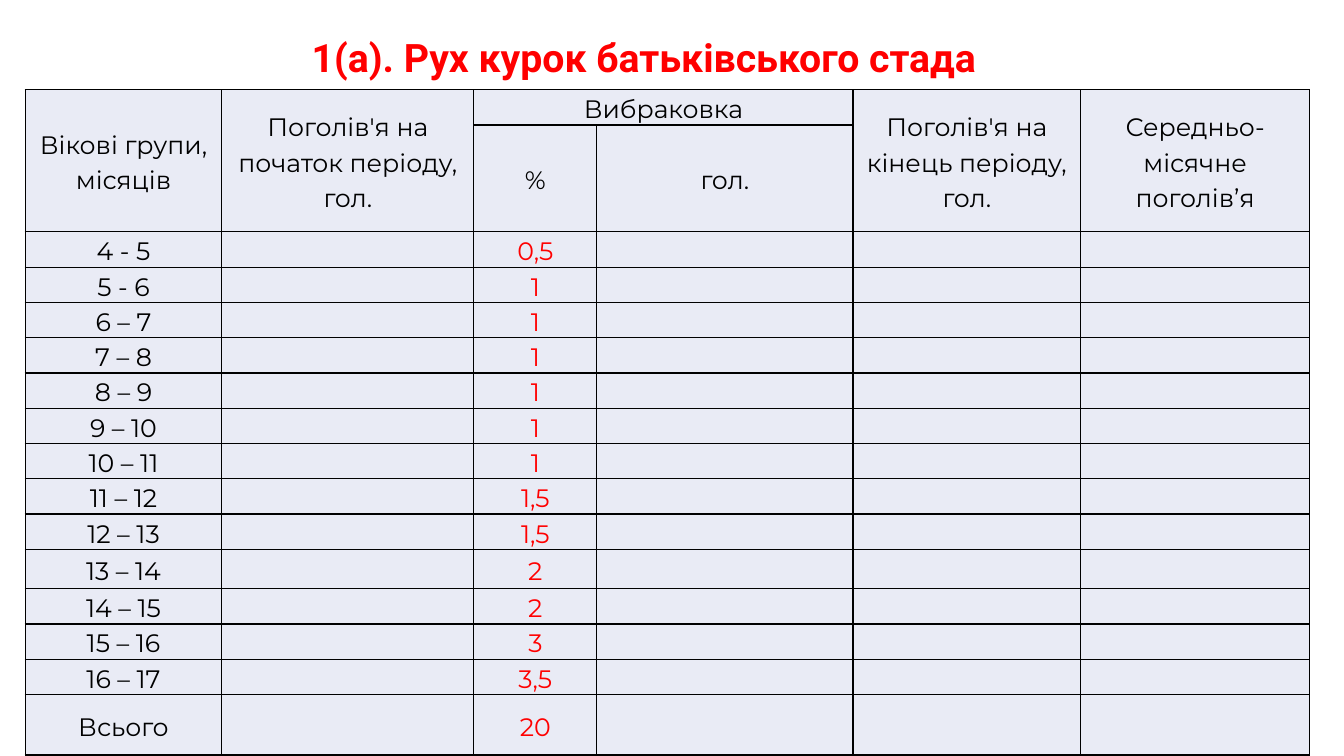
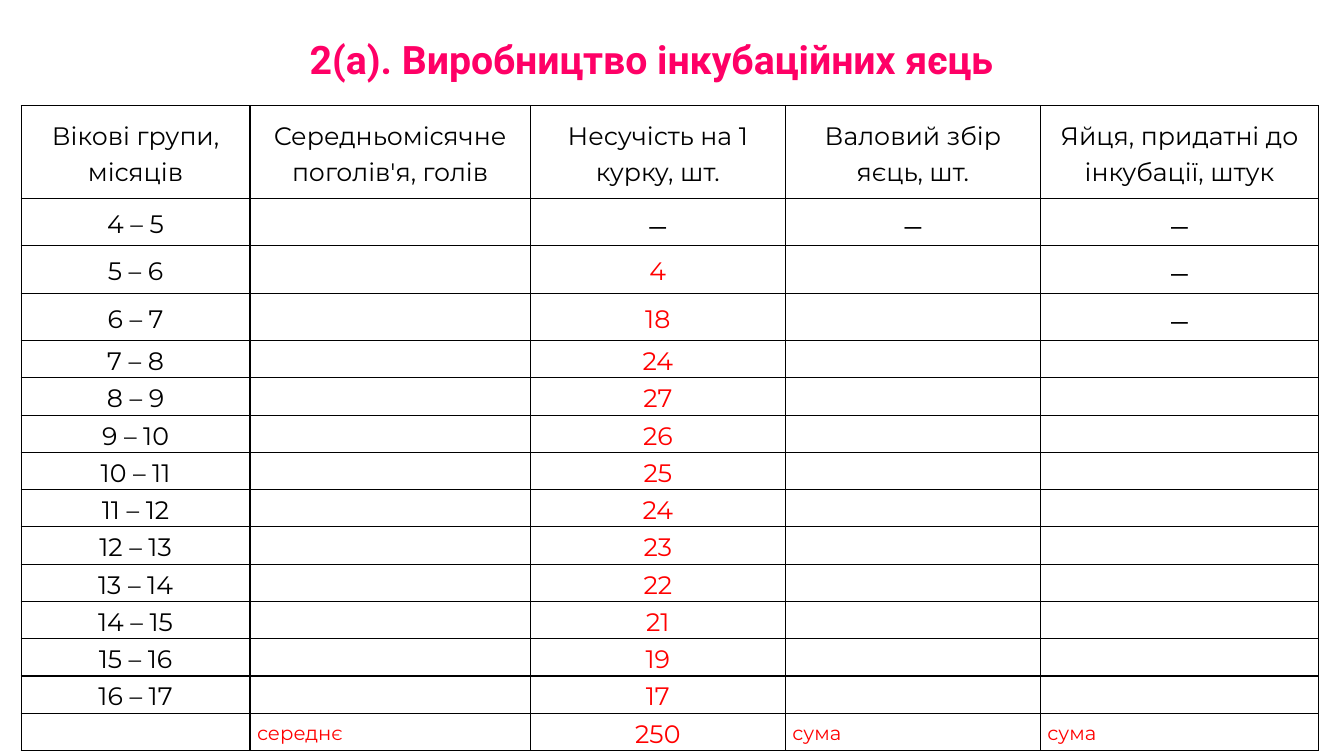
"""Build two slides with tables on poultry flock movement and hatching egg output."""
from dataclasses import dataclass

from lxml.etree import SubElement
from pptx import Presentation
from pptx.dml.color import RGBColor
from pptx.enum.text import MSO_ANCHOR, PP_ALIGN
from pptx.oxml.ns import qn
from pptx.util import Inches, Pt


@dataclass(frozen=True)
class Theme:
    heading_font: str = "Roboto"
    body_font: str = "Montserrat"
    heading_size: int = 28
    body_size: int = 18
    dash_size: int = 24
    note_size: int = 14
    ink: str = "000000"
    accent: str = "FF0000"
    pink: str = "FF0066"
    pale: str = "E9EBF5"


THEME = Theme()
DASH = "–"
NOTES = ("середнє", "сума")
VALUE_COLUMN = 2


def style(paragraph, font, size, color, align, spacing):
    paragraph.font.name = font
    paragraph.font.size = Pt(size)
    paragraph.font.color.rgb = RGBColor.from_string(color)
    paragraph.alignment = align
    paragraph.line_spacing = spacing


def add_borders(cell):
    properties = cell._tc.get_or_add_tcPr()
    for position, side in enumerate(("a:lnL", "a:lnR", "a:lnT", "a:lnB")):
        line = SubElement(properties, qn(side), w=str(Pt(1)))
        fill = SubElement(line, qn("a:solidFill"))
        SubElement(fill, qn("a:srgbClr"), val=THEME.ink)
        properties.insert(position, line)


ages = [f"{month} {DASH} {month + 1}" for month in range(4, 17)]
culling = ["0,5", "1", "1", "1", "1", "1", "1", "1,5", "1,5", "2", "2", "3", "3,5"]
laying = [DASH, "4", "18", "24", "27", "26", "25", "24", "23", "22", "21", "19", "17"]
flock_ages = ["4 - 5", "5 - 6"] + ages[2:]

flock_rows = [
    ["Вікові групи, місяців", "Поголів'я на початок періоду, гол.", "Вибраковка", "",
     "Поголів'я на кінець періоду, гол.", "Середньо-місячне поголів’я"],
    ["", "", "%", "гол.", "", ""],
    *[[age, "", percent, "", "", ""] for age, percent in zip(flock_ages, culling)],
    ["Всього", "", "20", "", "", ""],
]
egg_rows = [
    ["Вікові групи, місяців", "Середньомісячне поголів'я, голів",
     "Несучість на 1 курку, шт.", "Валовий збір яєць, шт.",
     "Яйця, придатні до інкубації, штук"],
    *[[age, "", eggs, DASH if month < 1 else "", DASH if month < 3 else ""]
      for month, (age, eggs) in enumerate(zip(ages, laying))],
    ["", "середнє", "250", "сума", "сума"],
]

pages = [
    dict(
        title="1(а). Рух курок батьківського стада", title_color=THEME.accent,
        title_box=(0.35, 0.33, 12.07, 0.56), origin=(0.25, 0.89), rows=flock_rows,
        widths=[1.95, 2.5, 1.22, 2.54, 2.26, 2.27],
        heights=[0.35, 1.06] + [0.35] * 9 + [0.39] + [0.35] * 3 + [0.6],
        merges=[(0, 0, 1, 0), (0, 1, 1, 1), (0, 2, 0, 3), (0, 4, 1, 4), (0, 5, 1, 5)],
        fill=THEME.pale, inset=0.02,
    ),
    dict(
        title="2(а). Виробництво інкубаційних яєць", title_color=THEME.pink,
        title_box=(0.5, 0.35, 11.92, 0.42), origin=(0.21, 1.05), rows=egg_rows,
        widths=[2.27, 2.78, 2.53, 2.53, 2.76],
        heights=[0.92] + [0.47] * 3 + [0.37] * 11,
        merges=[], fill=None, inset=0.07,
    ),
]

deck = Presentation()
deck.slide_width, deck.slide_height = Inches(13.33), Inches(7.5)

for page in pages:
    slide = deck.slides.add_slide(deck.slide_layouts[6])

    heading = slide.shapes.add_textbox(*map(Inches, page["title_box"])).text_frame
    heading.word_wrap = True
    title = heading.paragraphs[0]
    title.text = page["title"]
    style(title, THEME.heading_font, THEME.heading_size, page["title_color"],
          PP_ALIGN.CENTER, 0.9)
    title.font.bold = True

    rows, widths, heights = page["rows"], page["widths"], page["heights"]
    extent = (*page["origin"], sum(widths), sum(heights))
    table = slide.shapes.add_table(len(rows), len(widths), *map(Inches, extent)).table
    table.first_row = table.horz_banding = False
    for column, width in zip(table.columns, widths):
        column.width = Inches(width)
    for row, height in zip(table.rows, heights):
        row.height = Inches(height)
    for top, left, bottom, right in page["merges"]:
        table.cell(top, left).merge(table.cell(bottom, right))

    for r, texts in enumerate(rows):
        for c, text in enumerate(texts):
            cell = table.cell(r, c)
            cell.margin_left = cell.margin_right = Inches(page["inset"])
            cell.margin_top = cell.margin_bottom = 0
            cell.vertical_anchor = MSO_ANCHOR.MIDDLE
            if page["fill"]:
                cell.fill.solid()
                cell.fill.fore_color.rgb = RGBColor.from_string(page["fill"])
            else:
                cell.fill.background()
            add_borders(cell)

            size, color, align = THEME.body_size, THEME.ink, PP_ALIGN.CENTER
            if text == DASH:
                size = THEME.dash_size
            elif text in NOTES:
                size, color, align = THEME.note_size, THEME.accent, PP_ALIGN.LEFT
            elif c == VALUE_COLUMN and text[:1].isdigit():
                color = THEME.accent
            entry = cell.text_frame.paragraphs[0]
            if text:
                entry.text = text
            style(entry, THEME.body_font, size, color, align, 1.15)

deck.save("out.pptx")
